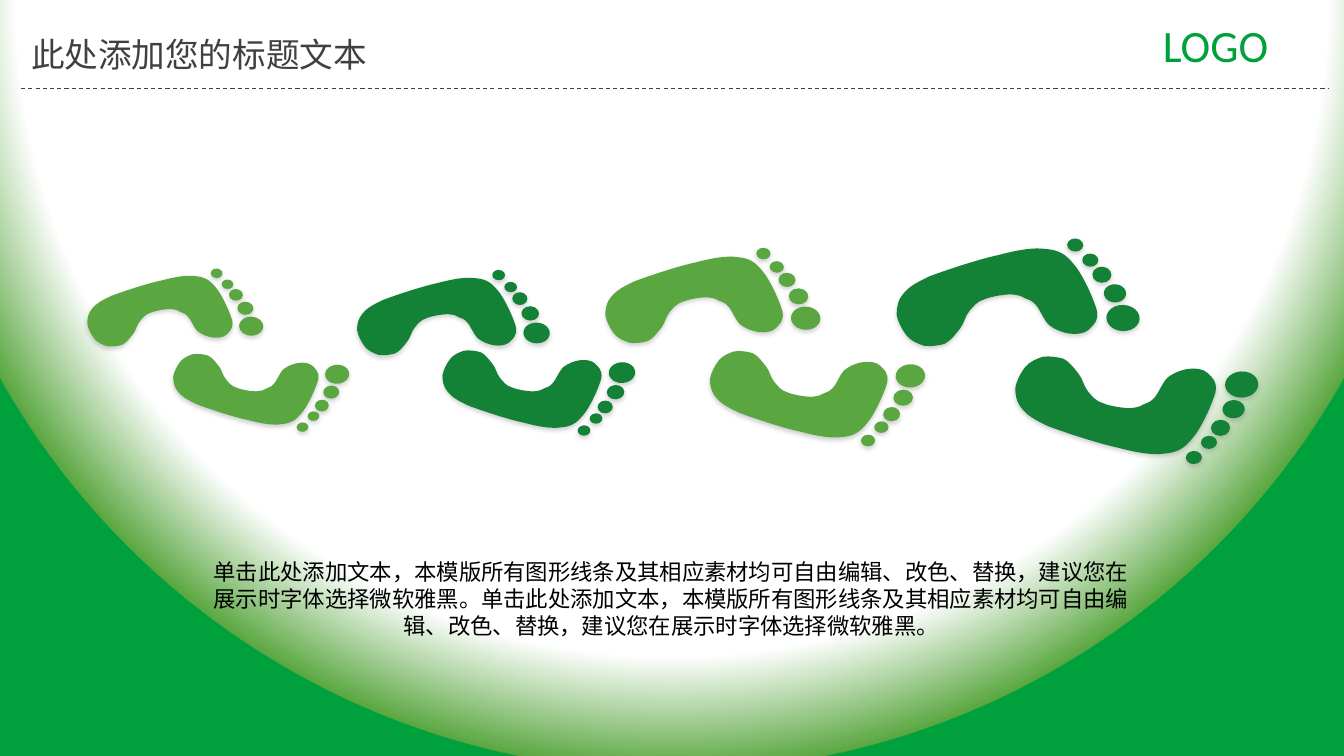
from lxml.etree import SubElement as Sub
from pptx import Presentation
from pptx.dml.color import RGBColor as RGB
from pptx.enum.dml import MSO_LINE as Dash
from pptx.enum.shapes import MSO_CONNECTOR as Conn, MSO_SHAPE as Form
from pptx.enum.text import PP_ALIGN as Align
from pptx.oxml import parse_xml
from pptx.oxml.ns import nsdecls, qn
from pptx.util import Pt

LIGHT = RGB(0x5A, 0xA7, 0x41)
DARK = RGB(0x13, 0x82, 0x36)
GREEN = RGB(0x00, 0xA0, 0x3C)
GREY = RGB(0x40, 0x40, 0x40)
WHITE = RGB(0xFF, 0xFF, 0xFF)
BLACK = RGB(0, 0, 0)
SHADE = RGB(0x80, 0x80, 0x80)
SANS = "Noto Sans CJK SC"

# One foot on a grid of 242 by 107 units: a start point, then Bezier curves.
WIDE, HIGH = 242, 107
START = (128, 60)
CURVES = [
    ((133, 62), (134, 62), (138, 66)), ((142, 70), (146, 81), (151, 86)),
    ((157, 91), (165, 94), (172, 95)), ((179, 96), (187, 95), (191, 91)),
    ((195, 87), (201, 83), (199, 72)), ((196, 61), (185, 36), (176, 26)),
    ((168, 16), (161, 12), (149, 11)), ((136, 9), (120, 12), (101, 17)),
    ((82, 21), (49, 32), (33, 38)), ((18, 45), (12, 49), (7, 55)),
    ((1, 62), (0, 69), (0, 76)), ((1, 83), (6, 92), (10, 97)),
    ((14, 102), (21, 105), (27, 107)), ((33, 108), (42, 107), (48, 105)),
    ((54, 102), (59, 95), (63, 90)), ((67, 85), (68, 78), (72, 73)),
    ((76, 68), (80, 63), (87, 61)), ((94, 58), (107, 56), (114, 56)),
    ((124, 57), (124, 58), (128, 60)),
]
# Toe centre, width and height on the same grid.
TOES = [(225, 79.5, 33, 26), (217, 55, 22, 18), (204, 36.5, 19, 16),
        (192.5, 22, 16, 13), (177.5, 7, 16, 13)]
TILT = 2.8

# Left, top and width of each foot, its colour, and whether it is mirrored.
FEET = [
    (62.4, 191.6, 126, LIGHT, False), (123.8, 253, 126, LIGHT, True),
    (255.2, 192.5, 138, DARK, False), (316.2, 250.5, 138, DARK, True),
    (432.6, 176.7, 154, LIGHT, False), (507.4, 251, 154, LIGHT, True),
    (640.8, 170, 174, DARK, False), (725.6, 254.9, 174, DARK, True),
]


def paint(shape, hue):
    """Fill a shape and give it a soft shadow below."""
    shape.fill.solid()
    shape.fill.fore_color.rgb = hue
    shape.line.fill.background()
    shape.shadow.inherit = False
    glow = Sub(shape._element.spPr.find(qn("a:effectLst")), qn("a:outerShdw"),
               blurRad=str(Pt(3.1)), dist=str(Pt(1.8)), dir="5400000",
               algn="ctr", rotWithShape="0")
    tone = Sub(glow, qn("a:srgbClr"), val=str(SHADE))
    Sub(tone, qn("a:alpha"), val="35000")


def bend(shape, curves):
    """Turn each straight segment of a freeform into a Bezier curve."""
    lines = list(shape._element.iter(qn("a:lnTo")))
    for line, (one, two, _) in zip(lines, curves):
        arc = line.makeelement(qn("a:cubicBezTo"))
        for x, y in (one, two):
            Sub(arc, qn("a:pt"), x=str(x - shape.left), y=str(y - shape.top))
        arc.append(line[0])
        line.getparent().replace(line, arc)


def foot(slide, left, top, width, hue, flip):
    unit = width / WIDE

    def spot(x, y):
        return (Pt(left + x * unit),
                Pt(top + (HIGH - y if flip else y) * unit))

    for x, y, w, h in TOES:
        mid, row = spot(x, y)
        w, h = Pt(w * unit), Pt(h * unit)
        toe = slide.shapes.add_shape(Form.OVAL, mid - w // 2, row - h // 2,
                                     w, h)
        toe.rotation = -TILT if flip else TILT
        paint(toe, hue)
    curves = [[spot(*p) for p in curve] for curve in CURVES]
    pen = slide.shapes.build_freeform(*spot(*START))
    pen.add_line_segments([curve[-1] for curve in curves], close=True)
    sole = pen.convert_to_shape()
    bend(sole, curves)
    paint(sole, hue)


def label(slide, box, text, look, align=Align.LEFT, pad=(7.2, 3.6)):
    frame = slide.shapes.add_textbox(*map(Pt, box)).text_frame
    side, edge = map(Pt, pad)
    form = dict(word_wrap=True, margin_left=side, margin_right=side,
                margin_top=edge, margin_bottom=edge)
    for key, val in form.items():
        setattr(frame, key, val)
    para = frame.paragraphs[0]
    para.alignment = align
    run = para.add_run()
    run.text = text
    look = dict(look)
    run.font.color.rgb = look.pop("hue")
    for key, val in look.items():
        setattr(run.font, key, val)
    Sub(run._r.get_or_add_rPr(), qn("a:ea"), typeface=look["name"])


def backdrop(slide):
    """Set a white circle that fades to green at the foot of the slide."""
    fill = slide.background.fill
    fill.solid()
    stops = [(0, WHITE), (85, WHITE), (100, LIGHT), (100, GREEN)]
    marks = "".join(f'<a:gs pos="{pos * 1000}"><a:srgbClr val="{hue}"/></a:gs>'
                    for pos, hue in stops)
    grad = parse_xml(
        f'<a:gradFill {nsdecls("a")} rotWithShape="1"><a:gsLst>{marks}</a:gsLst>'
        '<a:path path="circle"><a:fillToRect l="50000" t="-80000" r="50000"'
        ' b="180000"/></a:path></a:gradFill>')
    old = slide._element.find(".//" + qn("p:bgPr")).find(qn("a:solidFill"))
    old.getparent().replace(old, grad)


def header(slide, left, top, width):
    rule = slide.shapes.add_connector(Conn.STRAIGHT, Pt(left), Pt(top + 54),
                                      Pt(left + width), Pt(top + 54))
    rule.line.color.rgb = GREY
    for key, val in dict(width=Pt(0.75), dash_style=Dash.DASH).items():
        setattr(rule.line, key, val)
    Sub(rule._element.spPr, qn("a:effectLst"))
    label(slide, (left + 788.4, top, 130.3, 46), "LOGO",
          dict(name="Calibri", size=Pt(32), hue=GREEN), Align.CENTER)
    label(slide, (left, top + 11.5, 351.4, 36), "此处添加您的标题文本",
          dict(name=SANS, size=Pt(24), hue=GREY))


def caption(slide, box):
    text = ("单击此处添加文本，本模版所有图形线条及其相应素材均可自由编辑、改色、替换，"
            "建议您在展示时字体选择微软雅黑。")
    label(slide, box, text * 2, dict(name=SANS, size=Pt(16), hue=BLACK),
          Align.CENTER, (9.4, 5))


def main():
    deck = Presentation()
    deck.slide_width, deck.slide_height = Pt(960.5), Pt(540)
    slide = deck.slides.add_slide(deck.slide_layouts[6])
    backdrop(slide)
    header(slide, 15.1, 9.4, 934.6)
    for spec in FEET:
        foot(slide, *spec)
    caption(slide, (135.4, 393.8, 689, 72))
    deck.save("out.pptx")


if __name__ == "__main__":
    main()
